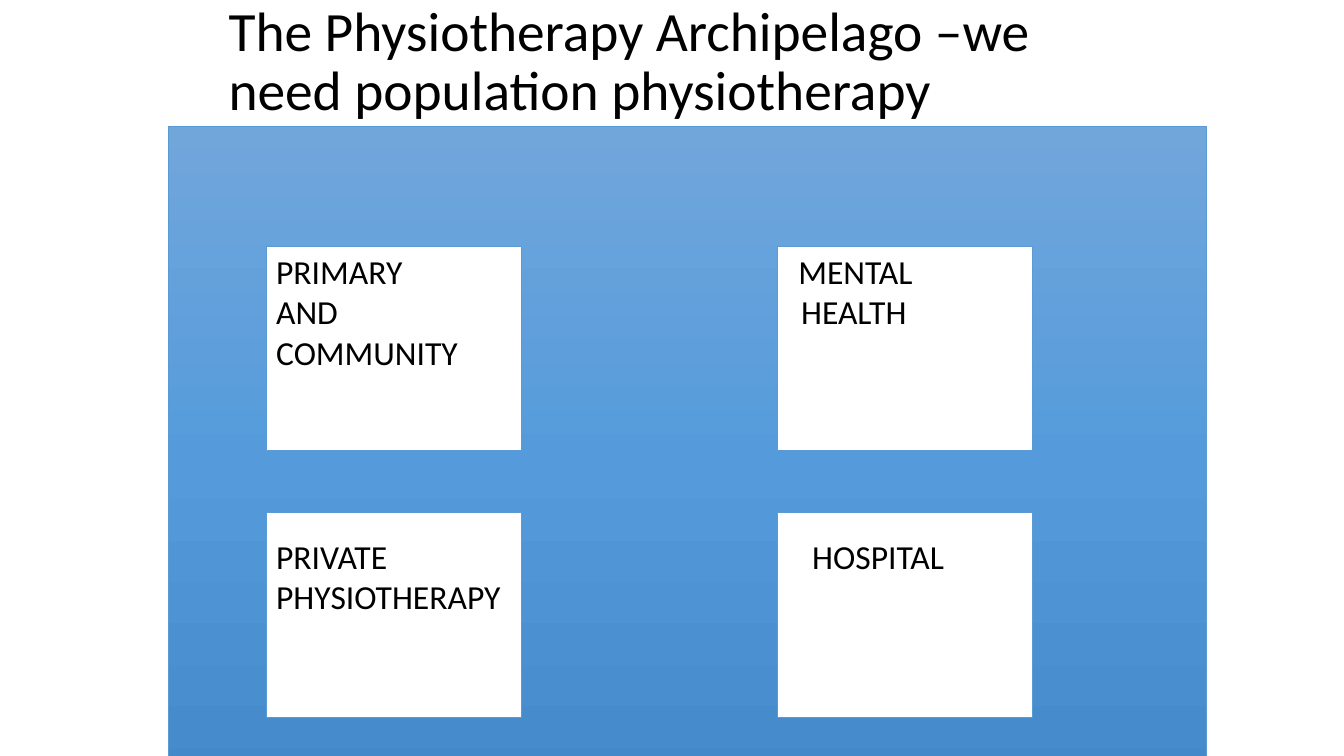
from copy import deepcopy
from dataclasses import dataclass

from lxml.etree import SubElement
from pptx import Presentation
from pptx.dml.color import RGBColor
from pptx.enum.shapes import MSO_SHAPE
from pptx.enum.text import MSO_ANCHOR, MSO_AUTO_SIZE
from pptx.oxml.ns import qn
from pptx.shapes.autoshape import Shape
from pptx.slide import Slide
from pptx.util import Cm, Pt

BLACK = RGBColor(0x00, 0x00, 0x00)
WHITE = RGBColor(0xFF, 0xFF, 0xFF)
OUTLINE = RGBColor(0x5B, 0x9B, 0xD5)
SEA_TOP = RGBColor(0x71, 0xA6, 0xDB)
SEA_MIDDLE = RGBColor(0x55, 0x9B, 0xDB)
SEA_BOTTOM = RGBColor(0x44, 0x8A, 0xCA)
FONT = "Calibri"


@dataclass(frozen=True)
class Box:
    left: float
    top: float
    width: float
    height: float

    def lengths(self) -> tuple[Cm, Cm, Cm, Cm]:
        return Cm(self.left), Cm(self.top), Cm(self.width), Cm(self.height)


@dataclass(frozen=True)
class LabelLine:
    left_label: str
    right_label: str = ""
    right_start: float = 0
    space_before: float = 0


TITLE = "The Physiotherapy Archipelago –we need population physiotherapy"
TITLE_BOX = Box(5.51, 0, 22.86, 3.18)
SEA_BOX = Box(4.24, 3.18, 26.16, 16.71)
FIRST_ISLAND = Box(6.71, 6.2, 6.43, 5.16)
COLUMN_STEP, ROW_STEP = 12.88, 6.71
LABELS_BOX = Box(6.71, 6.2, 18.42, 9.5)
LABEL_LINES = [
    LabelLine("PRIMARY", "MENTAL", 13.16),
    LabelLine("AND", "HEALTH", 13.23),
    LabelLine("COMMUNITY"),
    LabelLine("PRIVATE", "HOSPITAL", 13.51, space_before=117),
    LabelLine("PHYSIOTHERAPY"),
]


def add_rectangle(slide: Slide, box: Box) -> Shape:
    rectangle = slide.shapes.add_shape(MSO_SHAPE.RECTANGLE, *box.lengths())
    rectangle.shadow.inherit = False
    rectangle.line.color.rgb = OUTLINE
    rectangle.line.width = Pt(0.5)
    return rectangle


def add_sea(slide: Slide) -> None:
    fill = add_rectangle(slide, SEA_BOX).fill
    fill.gradient()
    fill.gradient_angle = 270
    stop_list = fill._fill._gradFill.gsLst
    stop_list.insert(1, deepcopy(stop_list[0]))
    colors = (SEA_TOP, SEA_MIDDLE, SEA_BOTTOM)
    for stop, color, position in zip(fill.gradient_stops, colors, (0, 0.5, 1)):
        stop.color.rgb = color
        stop.position = position


def add_islands(slide: Slide) -> None:
    for row in range(2):
        for column in range(2):
            island = add_rectangle(slide, Box(
                FIRST_ISLAND.left + column * COLUMN_STEP,
                FIRST_ISLAND.top + row * ROW_STEP,
                FIRST_ISLAND.width,
                FIRST_ISLAND.height,
            ))
            island.fill.solid()
            island.fill.fore_color.rgb = WHITE


def style_font(paragraph, size: float) -> None:
    paragraph.font.name = FONT
    paragraph.font.size = Pt(size)
    paragraph.font.color.rgb = BLACK


def add_title(slide: Slide) -> None:
    frame = slide.shapes.add_textbox(*TITLE_BOX.lengths()).text_frame
    frame.word_wrap = True
    frame.vertical_anchor = MSO_ANCHOR.MIDDLE
    heading = frame.paragraphs[0]
    heading.text = TITLE
    heading.line_spacing = 0.9
    style_font(heading, 39.6)


def add_labels(slide: Slide) -> None:
    """Write both columns of labels, the right one set off by a tab stop."""
    frame = slide.shapes.add_textbox(*LABELS_BOX.lengths()).text_frame
    frame.word_wrap = True
    frame.auto_size = MSO_AUTO_SIZE.SHAPE_TO_FIT_TEXT
    for index, line in enumerate(LABEL_LINES):
        paragraph = frame.add_paragraph() if index else frame.paragraphs[0]
        paragraph.text = line.left_label
        if line.right_label:
            paragraph.text += "\t" + line.right_label
            tabs = SubElement(paragraph._p.get_or_add_pPr(), qn("a:tabLst"))
            SubElement(tabs, qn("a:tab"), pos=str(Cm(line.right_start)), algn="l")
        if line.space_before:
            paragraph.space_before = Pt(line.space_before)
        style_font(paragraph, 24)


def main() -> None:
    presentation = Presentation()
    presentation.slide_width = Cm(33.87)
    presentation.slide_height = Cm(19.05)
    slide = presentation.slides.add_slide(presentation.slide_layouts[6])
    add_title(slide)
    add_sea(slide)
    add_islands(slide)
    add_labels(slide)
    presentation.save("out.pptx")


if __name__ == "__main__":
    main()
